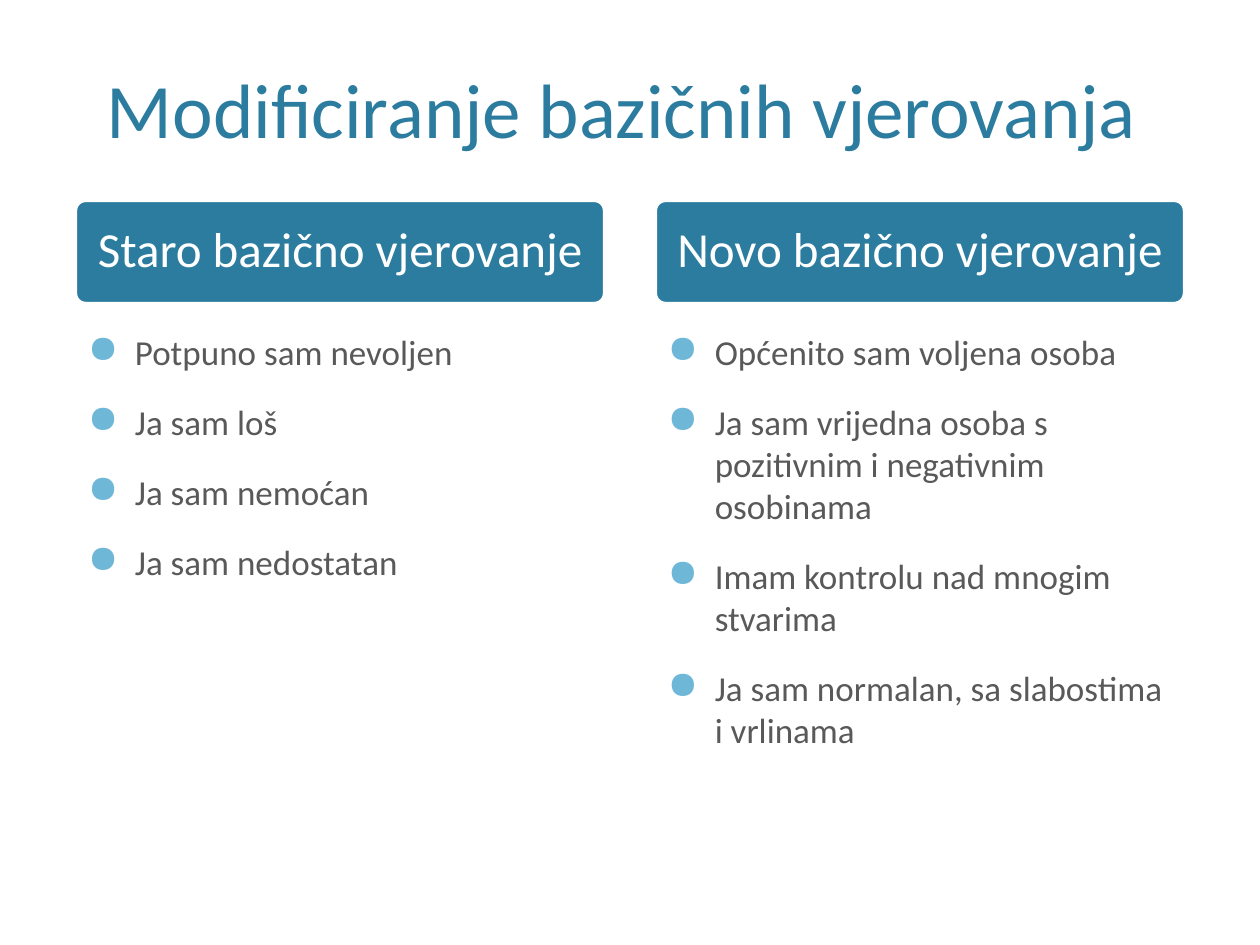
import pptx
import pptx.dml.color
import pptx.enum.shapes
import pptx.enum.text
import pptx.util
from lxml import etree
from pptx.oxml.ns import qn
from pptx.util import Cm, Pt

ALIGN = pptx.enum.text.PP_ALIGN
ANCHOR = pptx.enum.text.MSO_ANCHOR


def rgb(hex_color):
    return pptx.dml.color.RGBColor.from_string(hex_color)


def write(paragraph, text, size, color, font="Calibri", align=ALIGN.LEFT, before=0, spacing=1.0):
    paragraph.alignment = align
    paragraph.space_before = Pt(before)
    paragraph.line_spacing = spacing
    run = paragraph.add_run()
    run.text = text
    run.font.name = font
    run.font.size = Pt(size)
    run.font.color.rgb = rgb(color)


class BeliefSlide:
    """Hold the style and the current slide, and add its elements."""

    accent = "2C7C9F"
    bullet = "6FB7D7"
    body = "595959"
    white = "FFFFFF"

    def __init__(self, slide):
        self.slide = slide

    def title(self, text, left, top, width, height):
        heading = self.slide.shapes.title
        heading.left, heading.top = Cm(left), Cm(top)
        heading.width, heading.height = Cm(width), Cm(height)
        frame = heading.text_frame
        frame.word_wrap = True
        frame.vertical_anchor = ANCHOR.BOTTOM
        write(frame.paragraphs[0], text, 44, self.accent, align=ALIGN.CENTER)

    def banner(self, text, left, top, width, height):
        banner = self.slide.shapes.add_shape(
            pptx.enum.shapes.MSO_SHAPE.ROUNDED_RECTANGLE,
            Cm(left), Cm(top), Cm(width), Cm(height))
        banner.adjustments[0] = 0.1
        banner.shadow.inherit = False
        banner.fill.solid()
        banner.fill.fore_color.rgb = rgb(self.accent)
        banner.line.color.rgb = rgb(self.white)
        banner.line.width = Pt(2)
        frame = banner.text_frame
        frame.word_wrap = True
        frame.vertical_anchor = ANCHOR.MIDDLE
        frame.margin_left = frame.margin_right = Cm(0.3)
        frame.margin_top = frame.margin_bottom = Cm(0.3)
        write(frame.paragraphs[0], text, 28, self.white, align=ALIGN.CENTER, spacing=0.9)

    def bullets(self, beliefs, left, top, width, height):
        frame = self.slide.shapes.add_textbox(
            Cm(left), Cm(top), Cm(width), Cm(height)).text_frame
        frame.word_wrap = True
        for index, belief in enumerate(beliefs):
            paragraph = frame.add_paragraph() if index else frame.paragraphs[0]
            write(paragraph, belief, 20, self.body, before=16)
            self.mark(paragraph)

    def mark(self, paragraph):
        properties = paragraph._p.get_or_add_pPr()
        indent = Cm(0.95)
        properties.set("marL", str(indent))
        properties.set("indent", str(-indent))
        color = etree.SubElement(properties, qn("a:buClr"))
        etree.SubElement(color, qn("a:srgbClr"), val=self.bullet)
        etree.SubElement(properties, qn("a:buSzPct"), val="110000")
        etree.SubElement(properties, qn("a:buChar"), char="●")


def main():
    presentation = pptx.Presentation()
    presentation.slide_width, presentation.slide_height = Cm(25.4), Cm(19.05)
    page = BeliefSlide(presentation.slides.add_slide(presentation.slide_layouts[5]))
    page.title("Modificiranje bazičnih vjerovanja", 1.4, 1, 22.28, 2.24)

    columns = {
        "Staro bazično vjerovanje": [
            "Potpuno sam nevoljen",
            "Ja sam loš",
            "Ja sam nemoćan",
            "Ja sam nedostatan",
        ],
        "Novo bazično vjerovanje": [
            "Općenito sam voljena osoba",
            "Ja sam vrijedna osoba s pozitivnim i negativnim osobinama",
            "Imam kontrolu nad mnogim stvarima",
            "Ja sam normalan, sa slabostima i vrlinama",
        ],
    }
    width, gap = 10.67, 1.02
    for index, (heading, beliefs) in enumerate(columns.items()):
        left = 1.52 + index * (width + gap)
        page.banner(heading, left, 4.04, width, 2.08)
        page.bullets(beliefs, left, 6.53, width, 9.98)

    presentation.save("out.pptx")


if __name__ == "__main__":
    main()
